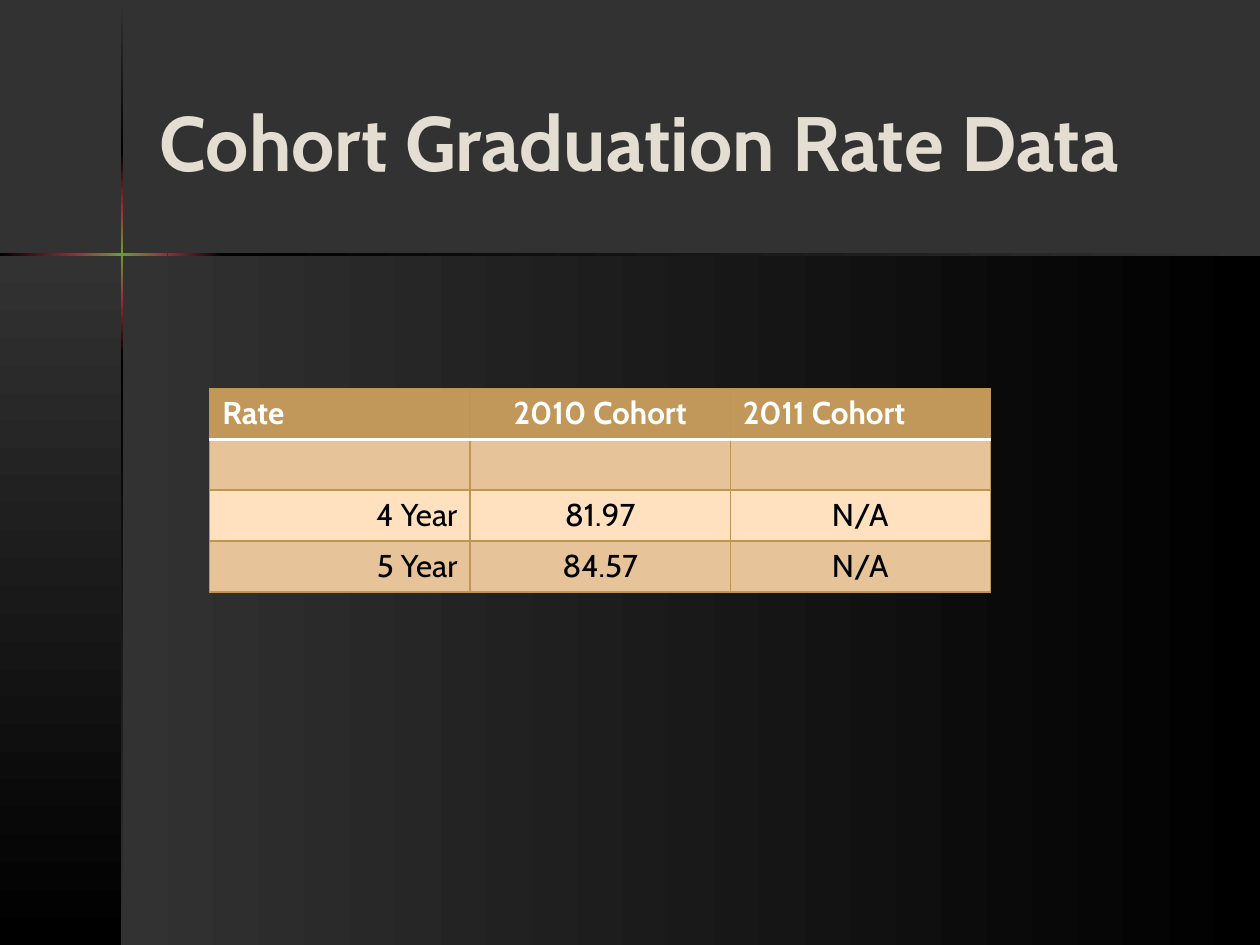
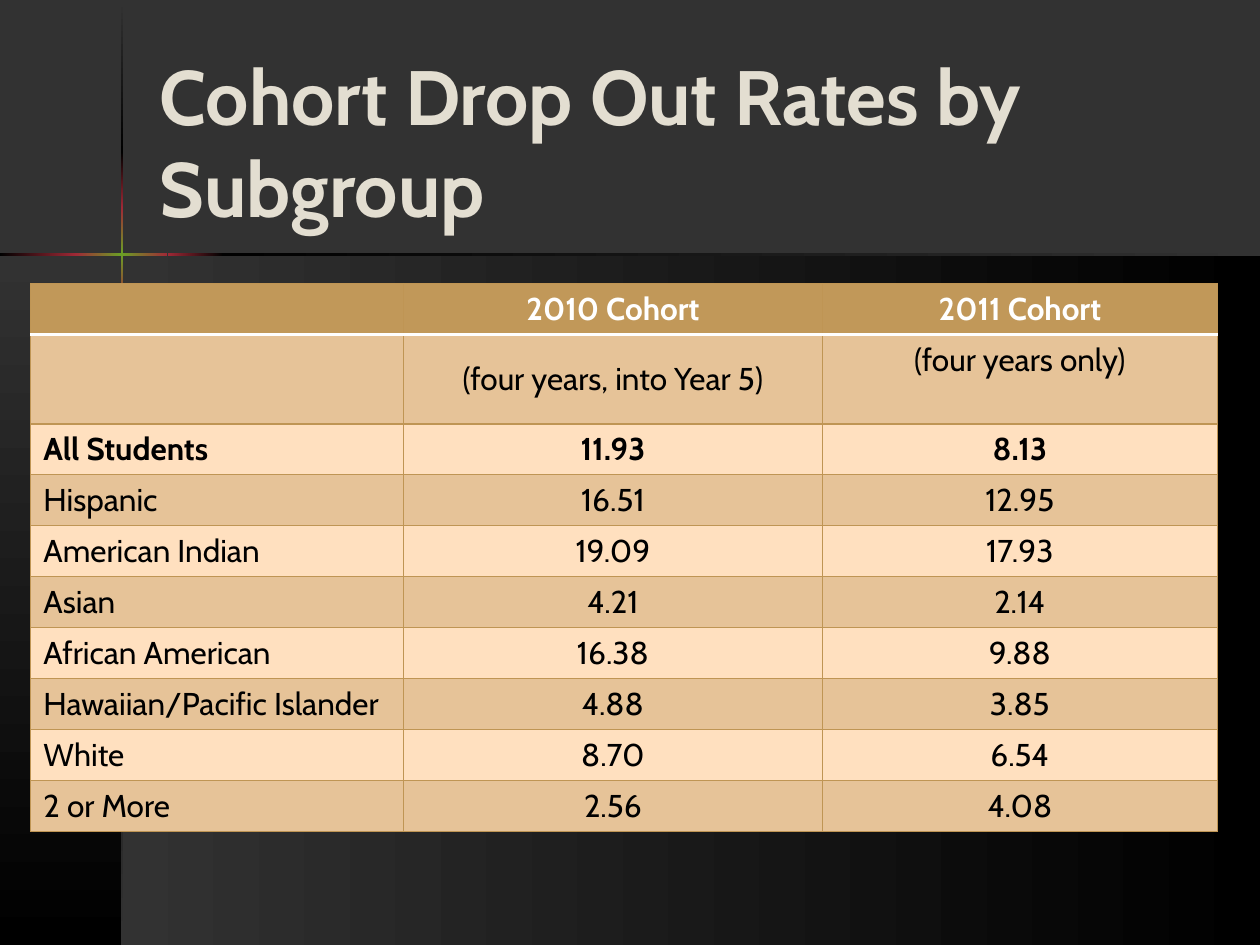
from dataclasses import dataclass

from pptx import Presentation
from pptx.dml.color import RGBColor
from pptx.enum.shapes import MSO_SHAPE
from pptx.enum.text import MSO_ANCHOR, PP_ALIGN
from pptx.oxml import parse_xml
from pptx.oxml.ns import nsdecls, qn
from pptx.util import Pt

RECT = MSO_SHAPE.RECTANGLE
TOP, MIDDLE = MSO_ANCHOR.TOP, MSO_ANCHOR.MIDDLE
ALIGN = {"L": PP_ALIGN.LEFT, "C": PP_ALIGN.CENTER, "R": PP_ALIGN.RIGHT}
PX = 4572  # EMU in one px, 200 px to the inch


@dataclass(frozen=True)
class Theme:
    font: str = "Cabin"
    title_size: int = 44
    cell_size: int = 18
    back: str = "323232"
    black: str = "000000"
    white: str = "FFFFFF"
    red: str = "9F2936"
    green: str = "6B9F25"
    cream: str = "E3DED1"
    head: str = "C19859"
    dark_band: str = "E6C398"
    light_band: str = "FFE0BF"
    rule: str = "BF9554"


T = Theme()

# Shared panels and crossing lines: left, top, width, height, colours, angle
GLOW = (T.red, T.green, T.red)
DECOR = [
    (194, 404, 1806, 1096, (T.back, T.black), 0),
    (0, 404, 194, 1096, (T.back, T.black), 90),
    (192, 2, 4, 240, (T.back, T.black), 90),
    (192, 564, 4, 936, (T.black, T.back), 90),
    (354, 402, 1646, 4, (T.black, T.back), 0),
    (192, 476, 4, 88, (T.red, T.black), 90),
    (192, 242, 4, 88, (T.black, T.red), 90),
    (192, 330, 4, 146, GLOW, 90),
    (0, 402, 121, 4, (T.black, T.red), 0),
    (266, 402, 88, 4, (T.red, T.black), 0),
    (120, 402, 146, 4, GLOW, 0),
]

# What differs from slide to slide
SLIDES = [
    dict(
        title="Cohort Graduation Rate Data",
        left=333, top=616, cols=[413] * 3, rows=[81] * 4,
        head="LCL", body="RCC", strong=[0],
        cells=[
            ("Rate", "2010 Cohort", "2011 Cohort"),
            ("", "", ""),
            ("4 Year", "81.97", "N/A"),
            ("5 Year", "84.57", "N/A"),
        ],
    ),
    dict(
        title="Cohort Drop Out Rates by Subgroup",
        left=49, top=450, cols=[592, 664, 628], rows=[81, 142] + [81] * 8,
        head="LCC", body="LCC", strong=[0, 2],
        cells=[
            ("", "2010 Cohort", "2011 Cohort"),
            ("", "(four years, into Year 5)", "(four years only)"),
            ("All Students", "11.93", "8.13"),
            ("Hispanic", "16.51", "12.95"),
            ("American Indian", "19.09", "17.93"),
            ("Asian", "4.21", "2.14"),
            ("African American", "16.38", "9.88"),
            ("Hawaiian/Pacific Islander", "4.88", "3.85"),
            ("White", "8.70", "6.54"),
            ("2 or More", "2.56", "4.08"),
        ],
    ),
]


def add_run(para, text, size, color, bold):
    run = para.add_run()
    run.text = text
    run.font.name = T.font
    run.font.size = Pt(size)
    run.font.bold = bold
    run.font.color.rgb = RGBColor.from_string(color)


def add_edge(cell, side, color, width):
    cell._tc.get_or_add_tcPr().append(parse_xml(
        f'<a:ln{side} {nsdecls("a")} w="{Pt(width)}"><a:solidFill>'
        f'<a:srgbClr val="{color}"/></a:solidFill></a:ln{side}>'))


deck = Presentation()
deck.slide_width, deck.slide_height = 2000 * PX, 1500 * PX

for page in SLIDES:
    slide = deck.slides.add_slide(deck.slide_layouts[6])
    slide.background.fill.solid()
    slide.background.fill.fore_color.rgb = RGBColor.from_string(T.back)

    # Panels and lines
    for *box, tints, angle in DECOR:
        shape = slide.shapes.add_shape(RECT, *[n * PX for n in box])
        shape.shadow.inherit = False
        shape.line.fill.background()
        shape.fill.background()
        stops = "".join(
            f'<a:gs pos="{i * 100000 // (len(tints) - 1)}">'
            f'<a:srgbClr val="{tint}"/></a:gs>'
            for i, tint in enumerate(tints))
        grad = parse_xml(
            f'<a:gradFill {nsdecls("a")} rotWithShape="1"><a:gsLst>{stops}'
            f'</a:gsLst><a:lin ang="{angle * 60000}" scaled="0"/></a:gradFill>')
        props = shape._element.spPr
        props.replace(props.find(qn("a:noFill")), grad)

    # Title
    frame = slide.shapes.add_textbox(
        234 * PX, 66 * PX, 1650 * PX, 314 * PX).text_frame
    frame.word_wrap = True
    frame.vertical_anchor = MIDDLE
    add_run(frame.paragraphs[0], page["title"], T.title_size, T.cream, True)

    # Table grid
    cols, rows = page["cols"], page["rows"]
    table = slide.shapes.add_table(
        len(rows), len(cols), page["left"] * PX, page["top"] * PX,
        sum(cols) * PX, sum(rows) * PX).table
    table.horz_banding = False
    for col, width in zip(table.columns, cols):
        col.width = width * PX
    for row, height in zip(table.rows, rows):
        row.height = height * PX

    # Table cells
    for r, line in enumerate(page["cells"]):
        fill = T.head if r == 0 else T.dark_band if r % 2 else T.light_band
        ink = T.black if r else T.white
        aligns = page["body"] if r else page["head"]
        thin, thick = (T.rule, 0.75), (T.white, 2)
        edges = {"L": thin, "R": thin,
                 "T": thick if r == 1 else thin,
                 "B": thick if r == 0 else thin}
        for c, text in enumerate(line):
            cell = table.cell(r, c)
            for side, edge in edges.items():
                add_edge(cell, side, *edge)
            cell.fill.solid()
            cell.fill.fore_color.rgb = RGBColor.from_string(fill)
            cell.vertical_anchor = MIDDLE if c == 1 else TOP
            para = cell.text_frame.paragraphs[0]
            para.alignment = ALIGN[aligns[c]]
            if text:
                add_run(para, text, T.cell_size, ink, r in page["strong"])

deck.save("out.pptx")
